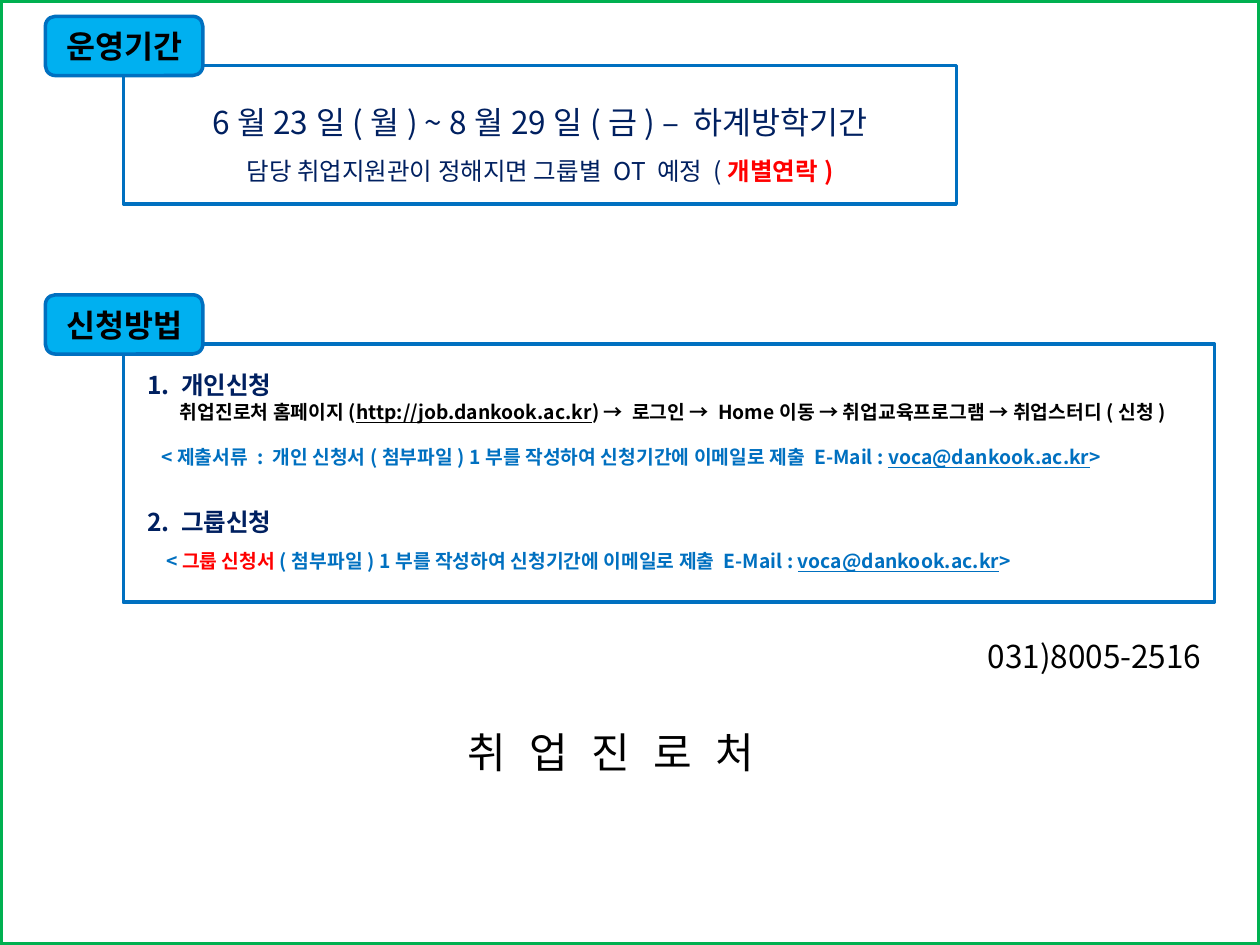
"""Build the notice slide on the operating period and how to apply."""
import pptx
import pptx.dml.color
import pptx.enum.shapes
import pptx.enum.text
import pptx.oxml
import pptx.oxml.ns
import pptx.util

Inches = pptx.util.Inches
Pt = pptx.util.Pt
SHAPES = pptx.enum.shapes.MSO_SHAPE
ALIGN = pptx.enum.text.PP_ALIGN
ANCHOR = pptx.enum.text.MSO_ANCHOR
FONT = "Noto Sans CJK KR"
COLORS = {"green": "00B050", "blue": "0070C0", "sky": "00B0F0",
          "navy": "002060", "red": "FF0000", "black": "000000"}
EMAIL = "voca@dankook.ac.kr"


def rgb(name):
    """Return the named colour."""
    return pptx.dml.color.RGBColor.from_string(COLORS[name])


def add_frame(slide, kind, place, line, width, fill=None):
    """Add an outlined shape and return its text frame."""
    frame = slide.shapes.add_shape(kind, *map(Inches, place))
    frame.shadow.inherit = False
    if fill:
        frame.fill.solid()
        frame.fill.fore_color.rgb = rgb(fill)
    else:
        frame.fill.background()
    frame.line.color.rgb = rgb(line)
    frame.line.width = Pt(width)
    frame.text_frame.word_wrap = True
    frame.text_frame.vertical_anchor = ANCHOR.MIDDLE
    return frame.text_frame


def write(paragraph, pieces, size, align=ALIGN.LEFT, bold=False, before=0, indent=0):
    """Fill a paragraph with (text, colour, extra style) pieces."""
    paragraph.alignment = align
    if before:
        paragraph.space_before = Pt(before)
    if indent:
        paragraph._p.get_or_add_pPr().set("marL", str(Inches(indent)))
    for text, color, *style in pieces:
        run = paragraph.add_run()
        run.text = text
        run.font.name = FONT
        run.font.size = Pt(size)
        run.font.bold = bold or "bold" in style
        run.font.underline = "underline" in style
        run.font.color.rgb = rgb(color)
        east_asian = pptx.oxml.parse_xml(
            f'<a:ea {pptx.oxml.ns.nsdecls("a")} typeface="{FONT}"/>')
        run._r.get_or_add_rPr().find(pptx.oxml.ns.qn("a:latin")).addnext(east_asian)


def add_section(slide, title, top, width, height):
    """Add a section box with its title tab and return the box's text frame."""
    body = add_frame(slide, SHAPES.RECTANGLE, (0.98, top + 0.39, width, height), "blue", 2)
    tab = add_frame(slide, SHAPES.ROUNDED_RECTANGLE, (0.36, top, 1.25, 0.47), "blue", 2, "sky")
    write(tab.paragraphs[0], [(title, "black")], 18, ALIGN.CENTER, bold=True)
    return body


def add_label(slide, text, place, size, spacing=0):
    """Add a one-line text box, optionally with letter spacing in points."""
    label = slide.shapes.add_textbox(*map(Inches, place)).text_frame
    label.word_wrap = False
    write(label.paragraphs[0], [(text, "black")], size)
    if spacing:
        label.paragraphs[0].runs[0]._r.get_or_add_rPr().set("spc", str(spacing * 100))


def add_period(slide):
    """Add the operating period section."""
    period = add_section(slide, "운영기간", 0.13, 6.61, 1.1)
    dates, orientation = period.paragraphs[0], period.add_paragraph()
    write(dates, [("6월23일(월) ~ 8월29일(금) – 하계방학기간", "navy")], 18, ALIGN.CENTER)
    write(orientation, [("담당 취업지원관이 정해지면 그룹별 OT 예정 (", "navy"),
                        ("개별연락)", "red", "bold")], 14, ALIGN.CENTER)
    for paragraph in (dates, orientation):
        paragraph.line_spacing = 1.5


def add_application(slide):
    """Add the section on individual and group applications."""
    application = add_section(slide, "신청방법", 2.34, 8.66, 2.05)
    application.vertical_anchor = ANCHOR.TOP
    application.margin_top = Inches(0.21)
    mail = [(EMAIL, "blue", "underline"), (">", "blue")]
    steps = [
        ([("1. 개인신청", "navy")], 14, 0, 0.09),
        ([("취업진로처 홈페이지(", "black"),
          ("http://job.dankook.ac.kr", "black", "underline"),
          (") → 로그인 → Home이동 → 취업교육프로그램 → 취업스터디(신청)", "black")],
         11, 0, 0.35),
        ([("<제출서류 : 개인 신청서(첨부파일) 1부를 작성하여 신청기간에 이메일로 제출 E-Mail : ",
           "blue")] + mail, 11, 13, 0.2),
        ([("2. 그룹신청", "navy")], 14, 22, 0.09),
        ([("<", "blue"), ("그룹 신청서", "red"),
          ("(첨부파일) 1부를 작성하여 신청기간에 이메일로 제출 E-Mail : ", "blue")] + mail,
         11, 7, 0.24),
    ]
    for number, (pieces, size, before, indent) in enumerate(steps):
        paragraph = application.add_paragraph() if number else application.paragraphs[0]
        write(paragraph, pieces, size, bold=True, before=before, indent=indent)


def main():
    """Build and save the slide."""
    deck = pptx.Presentation()
    deck.slide_width, deck.slide_height = Inches(10), Inches(7.5)
    slide = deck.slides.add_slide(deck.slide_layouts[6])
    add_frame(slide, SHAPES.RECTANGLE, (0, 0, 10, 7.5), "green", 3)
    add_application(slide)
    add_label(slide, "취 업 진 로 처", (3.61, 5.72, 2.78, 0.5), 24, spacing=4)
    add_label(slide, "031)8005-2516", (7.74, 5.01, 1.91, 0.4), 18)
    add_period(slide)
    deck.save("out.pptx")


if __name__ == "__main__":
    main()
